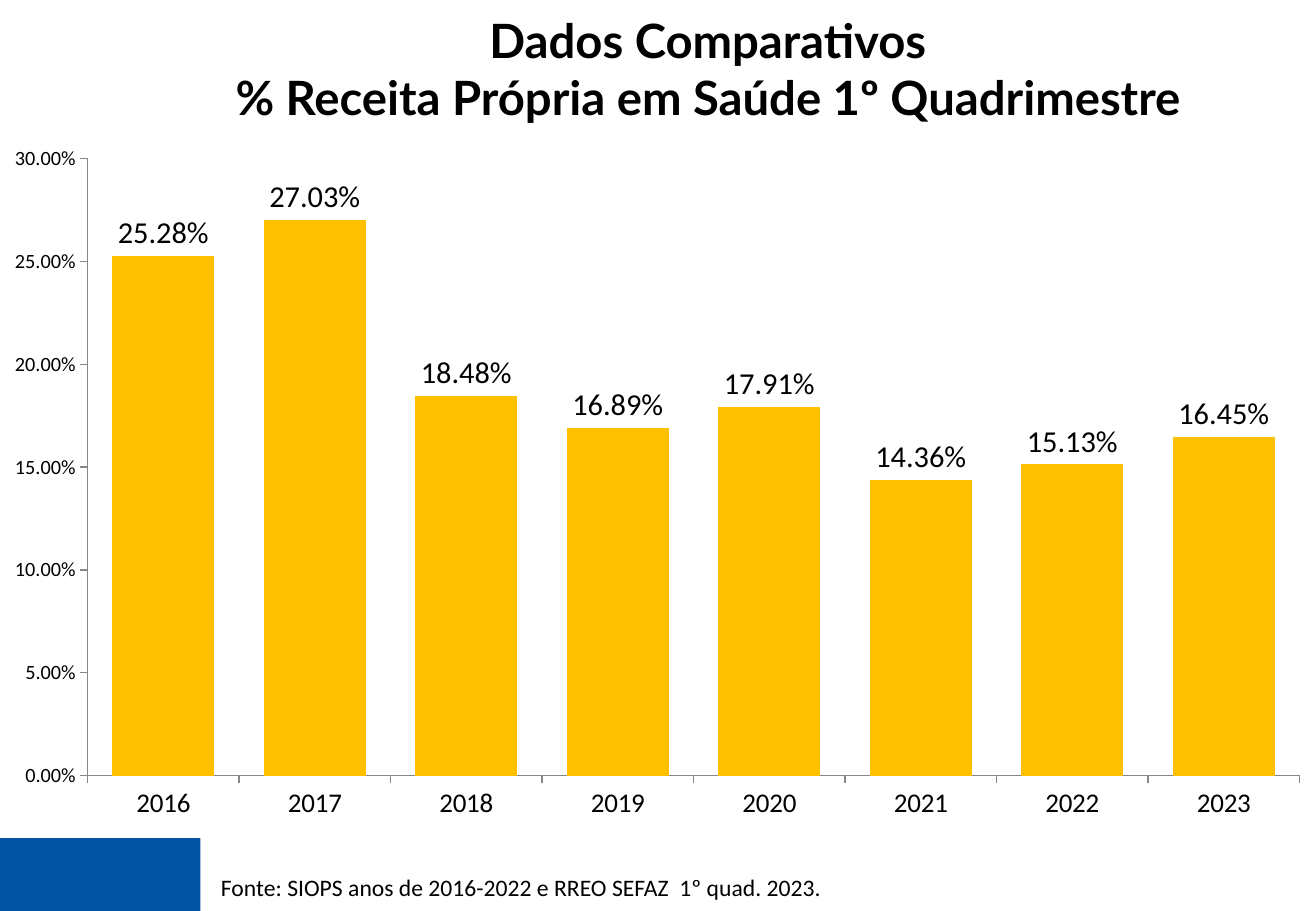
"""Build the slide comparing own revenue spent on health, 2016 to 2023."""
import pptx
import pptx.chart.data
import pptx.dml.color
import pptx.enum.chart
import pptx.enum.shapes
import pptx.enum.text
import pptx.util
from lxml import etree

Inches = pptx.util.Inches
Pt = pptx.util.Pt
COLORS = {"text": "000000", "bar": "FFC000", "axis": "868686", "block": "0154A4"}
RGB = {k: pptx.dml.color.RGBColor.from_string(v) for k, v in COLORS.items()}


def add_run(p, text, font, size, bold=False):
    r = p.add_run()
    r.text = text
    r.font.name = font
    r.font.size = Pt(size)
    r.font.bold = bold
    r.font.color.rgb = RGB["text"]


prs = pptx.Presentation()
prs.slide_width = Inches(10.83)
prs.slide_height = Inches(7.5)
s = prs.slides.add_slide(prs.slide_layouts[5])

title = s.shapes.title
title.left, title.top = Inches(0.8), Inches(0.04)
title.width, title.height = Inches(10.05), Inches(1.04)
tf = title.text_frame
tf.word_wrap = True
tf.auto_size = pptx.enum.text.MSO_AUTO_SIZE.NONE
tf.vertical_anchor = pptx.enum.text.MSO_ANCHOR.MIDDLE
lines = ["Dados Comparativos", "% Receita Própria em Saúde 1º Quadrimestre"]
for i, line in enumerate(lines):
    p = tf.add_paragraph() if i else tf.paragraphs[0]
    p.alignment = pptx.enum.text.PP_ALIGN.CENTER
    add_run(p, line, "Lato", 28, True)

tb = s.shapes.add_textbox(Inches(1.72), Inches(7.14), Inches(9.06), Inches(0.34))
tf = tb.text_frame
tf.word_wrap = True
p = tf.paragraphs[0]
p.alignment = pptx.enum.text.PP_ALIGN.JUSTIFY
add_run(p, "Fonte: SIOPS anos de 2016-2022 e RREO SEFAZ  1º quad. 2023.", "Calibri", 14)

data = pptx.chart.data.CategoryChartData(number_format="0.00%")
data.categories = [str(year) for year in range(2016, 2024)]
data.add_series("Series 1", [0.2528, 0.2703, 0.1848, 0.1689, 0.1791, 0.1436, 0.1513, 0.1645])
chart = s.shapes.add_chart(
    pptx.enum.chart.XL_CHART_TYPE.COLUMN_CLUSTERED,
    Inches(-0.1), Inches(1.15), Inches(10.8), Inches(6.06), data).chart
chart.has_legend = False
chart.has_title = False
chart.font.name = "Calibri"
chart.font.size = Pt(10)
chart.font.color.rgb = RGB["text"]

for axis, size in [(chart.category_axis, 16), (chart.value_axis, 12)]:
    axis.has_major_gridlines = False
    axis.major_tick_mark = pptx.enum.chart.XL_TICK_MARK.OUTSIDE
    axis.minor_tick_mark = pptx.enum.chart.XL_TICK_MARK.NONE
    axis.tick_labels.font.size = Pt(size)
    axis.tick_labels.font.name = "Calibri"
    axis.tick_labels.font.color.rgb = RGB["text"]
    axis.format.line.color.rgb = RGB["axis"]
    axis.format.line.width = Pt(0.75)
chart.value_axis.minimum_scale = 0
chart.value_axis.maximum_scale = 0.3
chart.value_axis.major_unit = 0.05
chart.value_axis.tick_labels.number_format = "0.00%"
chart.value_axis.tick_labels.number_format_is_linked = False

plot = chart.plots[0]
plot.gap_width = 48
plot.vary_by_categories = False
fill = plot.series[0].format.fill
fill.solid()
fill.fore_color.rgb = RGB["bar"]
plot.has_data_labels = True
labels = plot.data_labels
labels.show_value = True
labels.number_format = "0.00%"
labels.number_format_is_linked = False
labels.position = pptx.enum.chart.XL_LABEL_POSITION.OUTSIDE_END
labels.font.name = "Calibri"
labels.font.size = Pt(18)
labels.font.color.rgb = RGB["text"]

C = "{http://schemas.openxmlformats.org/drawingml/2006/chart}"
area = chart._chartSpace.find(f".//{C}plotArea")
for old in area.findall(f"{C}layout"):
    area.remove(old)
layout = etree.Element(f"{C}layout")
area.insert(0, layout)
manual = etree.SubElement(layout, f"{C}manualLayout")
settings = [("layoutTarget", "inner"), ("xMode", "edge"), ("yMode", "edge"),
            ("x", "0.076"), ("y", "0.026"), ("w", "0.924"), ("h", "0.838")]
for tag, val in settings:
    etree.SubElement(manual, f"{C}{tag}").set("val", val)

block = s.shapes.add_shape(
    pptx.enum.shapes.MSO_SHAPE.RECTANGLE,
    Inches(-0.04), Inches(6.9), Inches(1.69), Inches(0.6))
block.shadow.inherit = False
block.fill.solid()
block.fill.fore_color.rgb = RGB["block"]
block.line.fill.background()

prs.save("out.pptx")
